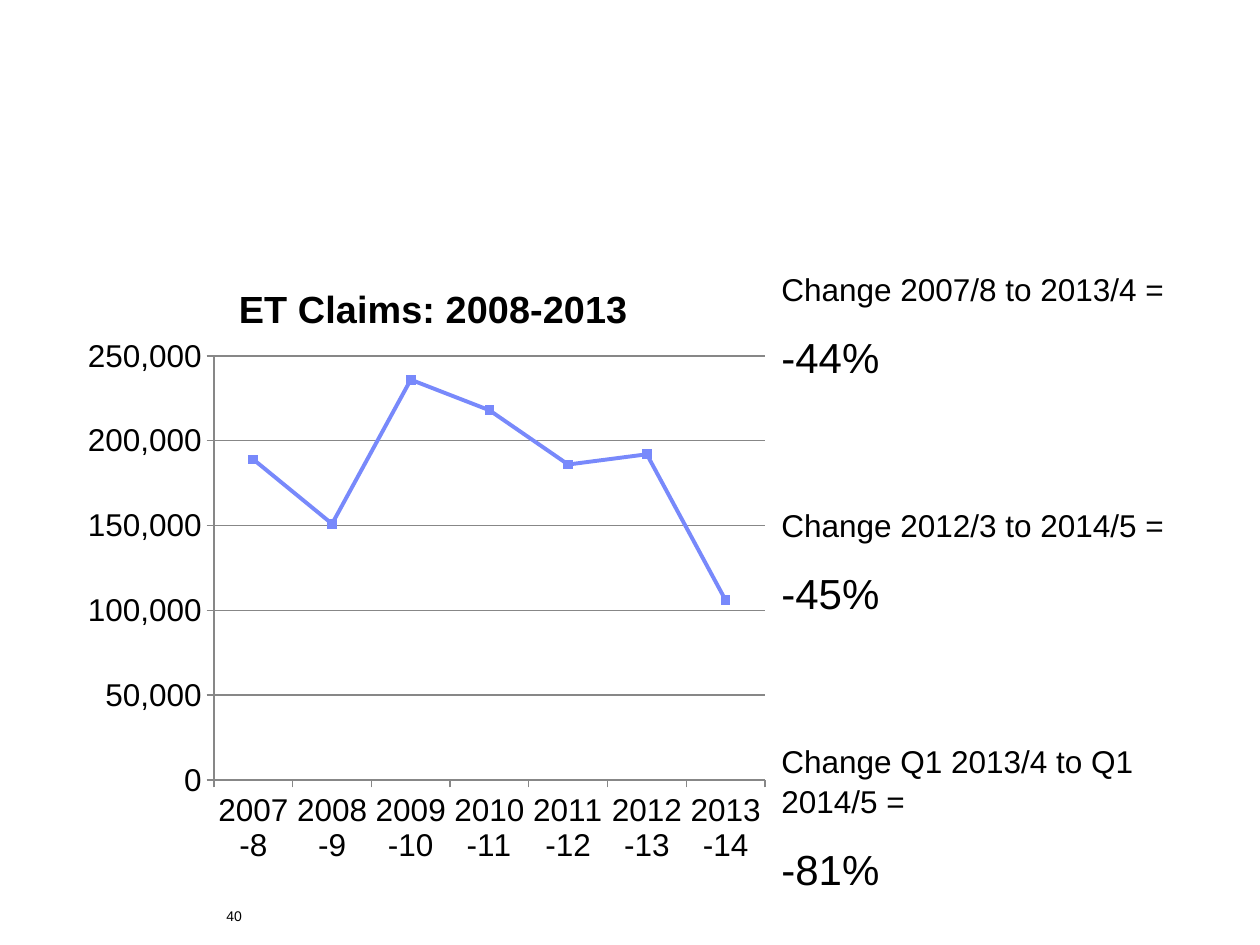
from lxml.etree import SubElement
from pptx import Presentation
from pptx.chart.data import CategoryChartData
from pptx.dml.color import RGBColor
from pptx.enum.chart import XL_CHART_TYPE, XL_MARKER_STYLE, XL_TICK_MARK
from pptx.oxml.ns import qn
from pptx.util import Emu, Pt

PX = 914400 // 126
FONT = "Arial"
BLACK, GREY, BLUE = "000000", "878787", "7889FB"
CHART_BOX = (74, 252, 704, 624)
PLOT_BOX = (214, 356, 551, 424)
TITLE_SPOT = (232, 278)
CLAIMS = {
    "2007-8": 189000,
    "2008-9": 151000,
    "2009-10": 236000,
    "2010-11": 218000,
    "2011-12": 186000,
    "2012-13": 192000,
    "2013-14": 106000,
}
CHANGES = [
    ("Change 2007/8 to 2013/4 =", "-44%"),
    ("Change 2012/3 to 2014/5 =", "-45%"),
    ("Change Q1 2013/4 to Q1 2014/5 =", "-81%"),
]


def px(*lengths):
    """Turn pixel lengths into EMU."""
    return [Emu(length * PX) for length in lengths]


def color(value):
    """Return the colour for a hex string."""
    return RGBColor.from_string(value)


def set_values(target, values):
    """Set the attributes of an object from a dict."""
    for name, value in values.items():
        setattr(target, name, value)


def format_font(font, size, bold=False):
    """Give a font its name, size, weight and colour."""
    set_values(font, {"name": FONT, "size": Pt(size), "bold": bold})
    font.color.rgb = color(BLACK)


def format_line(line, value, width):
    """Give a line its colour and width in points."""
    line.color.rgb = color(value)
    line.width = Pt(width)


def place_in_chart(element, successor, box, inner=False):
    """Place a chart part by a pixel box on the slide."""
    for old in element.findall(qn("c:layout")):
        element.remove(old)
    layout = element.makeelement(qn("c:layout"))
    element.find(qn(successor)).addprevious(layout)
    manual = SubElement(layout, qn("c:manualLayout"))
    left, top, width, height = CHART_BOX
    settings = [("layoutTarget", "inner")] if inner else []
    settings += [("xMode", "edge"), ("yMode", "edge")]
    shares = [(box[0] - left) / width, (box[1] - top) / height]
    shares += [length / full for length, full in zip(box[2:], (width, height))]
    settings += [(name, f"{share:.4f}") for name, share in zip("xywh", shares)]
    for name, value in settings:
        SubElement(manual, qn(f"c:{name}"), val=value)


def add_claims_chart(slide):
    """Add the line chart of claims by year."""
    data = CategoryChartData(number_format="#,##0")
    data.categories = list(CLAIMS)
    data.add_series("Series 1", list(CLAIMS.values()))
    chart = slide.shapes.add_chart(
        XL_CHART_TYPE.LINE_MARKERS_STACKED, *px(*CHART_BOX), data
    ).chart
    chart.has_legend = False
    format_font(chart.font, 18)

    paragraph = chart.chart_title.text_frame.paragraphs[0]
    run = paragraph.add_run()
    run.text = "ET Claims: 2008-2013"
    format_font(run.font, 21.6, bold=True)
    chart.chart_title.include_in_layout = False
    title = chart.chart_title._element
    place_in_chart(title, "c:overlay", TITLE_SPOT)
    plot_area = title.getparent().find(qn("c:plotArea"))
    place_in_chart(plot_area, "c:lineChart", PLOT_BOX, inner=True)

    for axis in (chart.category_axis, chart.value_axis):
        axis.major_tick_mark = XL_TICK_MARK.OUTSIDE
        format_line(axis.format.line, GREY, 0.75)
    value_axis = chart.value_axis
    set_values(value_axis, {"minimum_scale": 0, "maximum_scale": 250000,
                            "major_unit": 50000, "has_major_gridlines": True})
    set_values(value_axis.tick_labels, {"number_format": "#,##0",
                                        "number_format_is_linked": False})
    format_line(value_axis.major_gridlines.format.line, GREY, 0.75)

    chart.plots[0].vary_by_categories = False
    series = chart.plots[0].series[0]
    series.smooth = False
    format_line(series.format.line, BLUE, 2.25)
    set_values(series.marker, {"style": XL_MARKER_STYLE.SQUARE, "size": 5})
    series.marker.format.fill.solid()
    series.marker.format.fill.fore_color.rgb = color(BLUE)
    format_line(series.marker.format.line, BLUE, 0.75)


def add_text(slide, box, lines):
    """Add a text box of (text, size, space before, line spacing) lines."""
    frame = slide.shapes.add_textbox(*px(*box)).text_frame
    frame.word_wrap = True
    for index, (text, size, before, spacing) in enumerate(lines):
        paragraph = frame.add_paragraph() if index else frame.paragraphs[0]
        set_values(paragraph, {"space_before": Pt(before), "line_spacing": spacing})
        run = paragraph.add_run()
        run.text = text
        format_font(run.font, size)


def main():
    """Build the slide and save it."""
    presentation = Presentation()
    set_values(presentation, dict(zip(("slide_width", "slide_height"), px(1260, 945))))
    slide = presentation.slides.add_slide(presentation.slide_layouts[6])
    add_claims_chart(slide)
    lines = []
    for index, (label, change) in enumerate(CHANGES):
        lines += [(label, 18, 70 if index else 0, 1.05), (change, 24, 12, 1.05)]
    add_text(slide, (769, 262, 431, 580), lines)
    add_text(slide, (214, 901, 819, 25), [("40", 8, 0, 1.0)])
    presentation.save("out.pptx")


if __name__ == "__main__":
    main()
